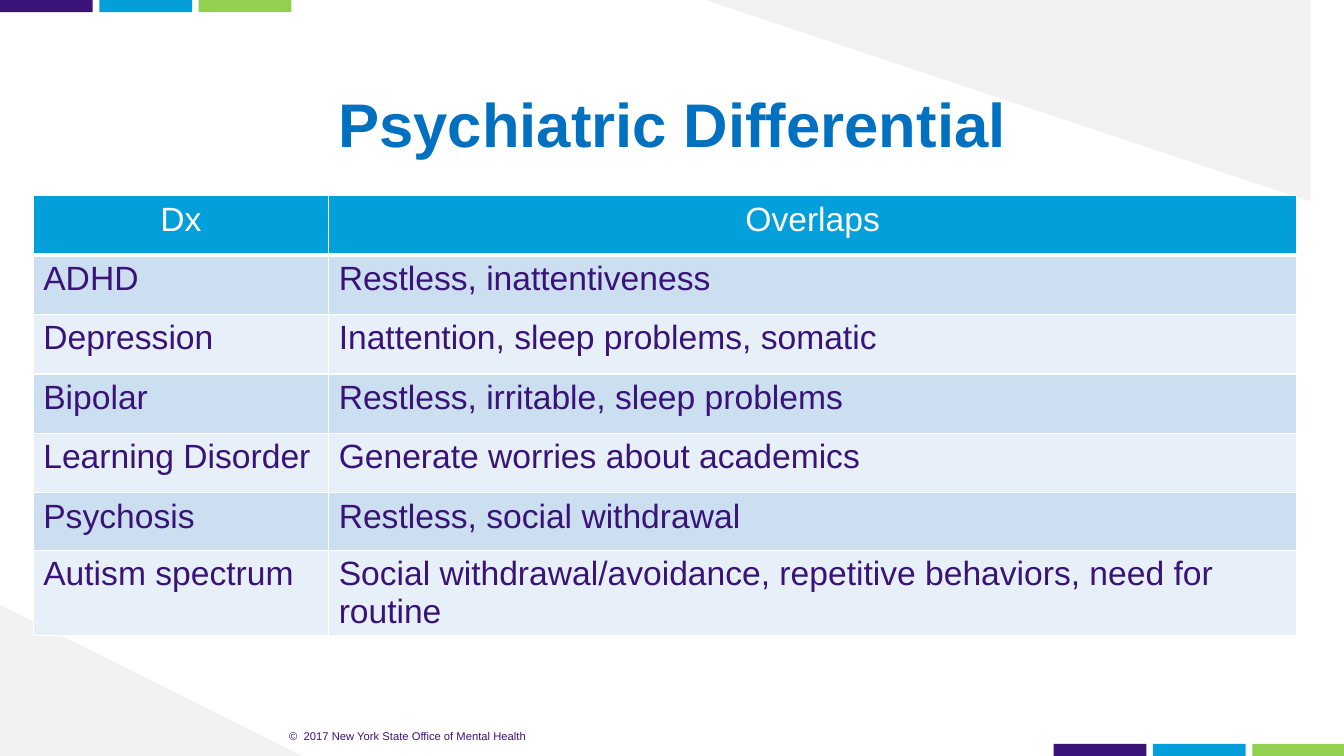
from dataclasses import dataclass

import pptx
import pptx.dml.color
import pptx.enum.shapes
import pptx.enum.text
import pptx.oxml
import pptx.oxml.ns
import pptx.util

Inches = pptx.util.Inches
Pt = pptx.util.Pt
Align = pptx.enum.text.PP_ALIGN
Anchor = pptx.enum.text.MSO_ANCHOR


@dataclass(frozen=True)
class Theme:
    font: str = "Arial"
    title_size: int = 44
    table_size: int = 24
    footer_size: int = 8
    title: str = "0070C0"
    ink: str = "391378"
    white: str = "FFFFFF"
    corner: str = "F2F2F2"
    header: str = "039FDA"
    bands: tuple = ("CCDFF1", "E7F0F8")
    bars: tuple = ("391378", "049FDA", "92D050")


THEME = Theme()
PAGE_WIDTH, PAGE_HEIGHT = 13.33, 7.5
BAR_WIDTH, BAR_HEIGHT, BAR_STEP = 0.92, 0.12, 0.985

COLUMN_WIDTHS = (2.93, 9.6)
ROW_HEIGHTS = (0.59, 0.59, 0.59, 0.59, 0.59, 0.57, 0.7)
DIAGNOSES = (
    ("Dx", "Overlaps"),
    ("ADHD", "Restless, inattentiveness"),
    ("Depression", "Inattention, sleep problems, somatic"),
    ("Bipolar", "Restless, irritable, sleep problems"),
    ("Learning Disorder", "Generate worries about academics"),
    ("Psychosis", "Restless, social withdrawal"),
    ("Autism spectrum", "Social withdrawal/avoidance, repetitive behaviors, need for routine"),
)


def rgb(color):
    return pptx.dml.color.RGBColor.from_string(color)


def paint(shape, color):
    shape.shadow.inherit = False
    shape.fill.solid()
    shape.fill.fore_color.rgb = rgb(color)
    shape.line.fill.background()


def add_corner(page, points):
    scale = Inches(1)
    builder = page.shapes.build_freeform(*points[0], scale=scale)
    builder.add_line_segments(points[1:], close=True)
    paint(builder.convert_to_shape(), THEME.corner)


def add_bars(page, left, top):
    for index, color in enumerate(THEME.bars):
        bar = page.shapes.add_shape(
            pptx.enum.shapes.MSO_SHAPE.RECTANGLE,
            Inches(left + index * BAR_STEP), Inches(top),
            Inches(BAR_WIDTH), Inches(BAR_HEIGHT))
        paint(bar, color)


def write(frame, text, size, color, align=Align.LEFT, bold=False):
    frame.text = text
    para = frame.paragraphs[0]
    para.alignment = align
    for span in para.runs:
        span.font.name = THEME.font
        span.font.size = Pt(size)
        span.font.bold = bold
        span.font.color.rgb = rgb(color)


def fit_frame(frame):
    """Centre the text vertically with narrow, equal margins."""
    frame.word_wrap = True
    frame.auto_size = pptx.enum.text.MSO_AUTO_SIZE.NONE
    frame.vertical_anchor = Anchor.MIDDLE
    frame.margin_left = frame.margin_right = Inches(0.05)
    frame.margin_top = frame.margin_bottom = Inches(0.05)


def add_title(page, text):
    title = page.shapes.title
    title.left, title.top = Inches(2.17), Inches(0.64)
    title.width, title.height = Inches(9), Inches(1.25)
    fit_frame(title.text_frame)
    write(title.text_frame, text, THEME.title_size, THEME.title, Align.CENTER, True)
    title.text_frame.paragraphs[0].line_spacing = 0.9
    # Bring the title in front of the corner shapes.
    title.element.getparent().append(title.element)


def add_footer(page, text):
    box = page.shapes.add_textbox(Inches(1.81), Inches(7.18), Inches(4.47), Inches(0.24))
    fit_frame(box.text_frame)
    write(box.text_frame, text, THEME.footer_size, THEME.ink, Align.CENTER)


def add_borders(cell, bottom_width):
    widths = {"lnL": 1, "lnR": 1, "lnT": 1, "lnB": bottom_width}
    properties = cell._tc.get_or_add_tcPr()
    for position, (side, width) in enumerate(widths.items()):
        border = pptx.oxml.parse_xml(
            f'<a:{side} {pptx.oxml.ns.nsdecls("a")} w="{Pt(width)}"><a:solidFill>'
            f'<a:srgbClr val="{THEME.white}"/></a:solidFill></a:{side}>')
        properties.insert(position, border)


def add_diagnosis_table(page):
    table = page.shapes.add_table(
        len(DIAGNOSES), len(COLUMN_WIDTHS), Inches(0.33), Inches(1.94),
        Inches(sum(COLUMN_WIDTHS)), Inches(sum(ROW_HEIGHTS))).table
    for column, width in zip(table.columns, COLUMN_WIDTHS):
        column.width = Inches(width)
    for index, (row, height, texts) in enumerate(zip(table.rows, ROW_HEIGHTS, DIAGNOSES)):
        row.height = Inches(height)
        is_header = index == 0
        fill = THEME.header if is_header else THEME.bands[(index - 1) % 2]
        color = THEME.white if is_header else THEME.ink
        align = Align.CENTER if is_header else Align.LEFT
        for cell, text in zip(row.cells, texts):
            cell.fill.solid()
            cell.fill.fore_color.rgb = rgb(fill)
            write(cell.text_frame, text, THEME.table_size, color, align)
            add_borders(cell, bottom_width=3 if is_header else 1)


def main():
    deck = pptx.Presentation()
    deck.slide_width, deck.slide_height = Inches(PAGE_WIDTH), Inches(PAGE_HEIGHT)
    page = deck.slides.add_slide(deck.slide_layouts.get_by_name("Title Only"))
    page.background.fill.solid()
    page.background.fill.fore_color.rgb = rgb(THEME.white)

    add_corner(page, [(0, 5.86), (0, PAGE_HEIGHT), (4.19, PAGE_HEIGHT)])
    add_corner(page, [(PAGE_WIDTH, 2.43), (PAGE_WIDTH, 0), (7.12, 0)])
    add_bars(page, 0, 0)
    add_bars(page, 10.45, PAGE_HEIGHT - BAR_HEIGHT)
    add_footer(page, "©  2017 New York State Office of Mental Health")
    add_title(page, "Psychiatric Differential")
    add_diagnosis_table(page)
    deck.save("out.pptx")


if __name__ == "__main__":
    main()
